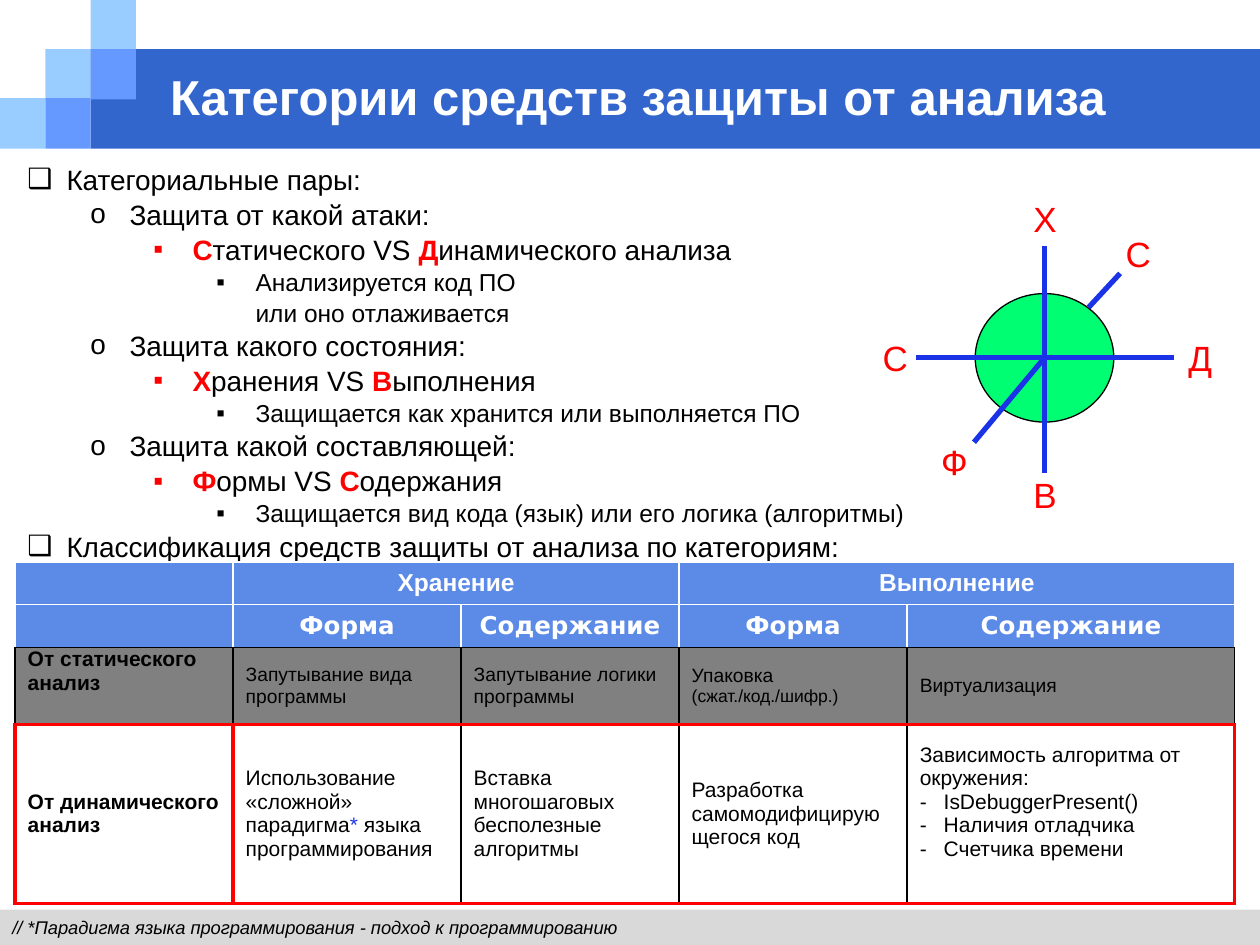
"""Builds a slide on categories of protection against program analysis."""
from dataclasses import dataclass

from lxml import etree
from pptx import Presentation
from pptx import util as u
from pptx.dml.color import RGBColor
from pptx.enum import shapes, text
from pptx.oxml import ns


@dataclass(frozen=True)
class Theme:
    font: str = "Arial"
    subhead_font: str = "DejaVu Sans"
    banner: str = "3366CC"
    tile_light: str = "99CCFF"
    tile_dark: str = "6699FF"
    header: str = "5C8AE7"
    gray: str = "808080"
    footer: str = "D9D9D9"
    white: str = "FFFFFF"
    black: str = "000000"
    red: str = "FF0000"
    blue: str = "1B33E7"
    green: str = "00FE73"
    title_size: float = 28
    axis_size: float = 20
    body_size: float = 16
    detail_size: float = 14
    cell_size: float = 12
    small_size: float = 11
    tiny_size: float = 10
    footer_size: float = 10.5


THEME = Theme()
CENTER = text.PP_ALIGN.CENTER
LEFT = text.PP_ALIGN.LEFT
MIDDLE = text.MSO_ANCHOR.MIDDLE

OUTLINE = [
    (0, "Категориальные пары:"),
    (1, "Защита от какой атаки:"),
    (2, "|С|татического VS |Д|инамического анализа"),
    (3, "Анализируется код ПО\nили оно отлаживается"),
    (1, "Защита какого состояния:"),
    (2, "|Х|ранения VS |В|ыполнения"),
    (3, "Защищается как хранится или выполняется ПО"),
    (1, "Защита какой составляющей:"),
    (2, "|Ф|ормы VS |С|одержания"),
    (3, "Защищается вид кода (язык) или его логика (алгоритмы)"),
    (0, "Классификация средств защиты от анализа по категориям:"),
]
COLUMNS = [1.73, 1.81, 1.73, 1.81, 2.6]
ROWS = [0.34, 0.34, 0.61, 1.42]
TABLE = [
    [[""], ["Хранение"], [""], ["Выполнение"], [""]],
    [[""], ["Форма"], ["Содержание"], ["Форма"], ["Содержание"]],
    [["От статического\nанализ"], ["Запутывание вида программы"], ["Запутывание логики программы"],
     ["Упаковка", "(сжат./код./шифр.)"], ["Виртуализация"]],
    [["От динамического\nанализ"], ["Использование «сложной» парадигма|*| языка программирования"],
     ["Вставка многошаговых бесполезные алгоритмы"], ["Разработка самомодифицирующегося код"],
     ["Зависимость алгоритма от окружения:", "- IsDebuggerPresent()", "- Наличия отладчика",
      "- Счетчика времени"]],
]
AXES = [
    ((7.27, 2.84), (9.32, 2.84)),
    ((8.29, 3.75), (8.29, 1.95)),
    ((7.73, 3.51), (8.29, 2.84)),
    ((8.64, 2.44), (8.89, 2.17)),
]
AXIS_LETTERS = [("С", 6.9, 2.62), ("Д", 9.32, 2.62), ("Х", 8.09, 1.52),
                ("В", 8.09, 3.71), ("Ф", 7.37, 3.45), ("С", 8.83, 1.8)]


def rgb(color):
    """Return a colour object for a hex string."""
    return RGBColor.from_string(color)


def inches(*lengths):
    """Convert several lengths to inches."""
    return [u.Inches(length) for length in lengths]


def set_bullet(para, mark, indent, hang):
    """Give a paragraph a bullet character and a hanging indent."""
    props = para._p.get_or_add_pPr()
    props.set("marL", str(u.Inches(indent)))
    props.set("indent", str(-u.Inches(hang)))
    etree.SubElement(props, ns.qn("a:buFont")).set("typeface", THEME.font)
    etree.SubElement(props, ns.qn("a:buChar")).set("char", mark)


def write(para, words, size, color=THEME.black, bold=False, italic=False, align=LEFT,
          font=THEME.font, accent=THEME.red, accent_bold=True):
    """Fill a paragraph; parts between bars take the accent colour."""
    para.alignment = align
    para.font.name, para.font.size = font, u.Pt(size)
    para.font.bold, para.font.italic = bold, italic
    para.font.color.rgb = rgb(color)
    for index, part in enumerate(words.split("|")):
        for number, line in enumerate(part.split("\n")):
            if number:
                para.add_line_break()
            if line:
                span = para.add_run()
                span.text = line
                if index % 2:
                    span.font.color.rgb = rgb(accent)
                    span.font.bold = accent_bold


def add_block(page, kind, place, fill, line=None):
    """Add a flat preset shape."""
    block = page.shapes.add_shape(kind, *inches(*place))
    block.shadow.inherit = False
    block.fill.solid()
    block.fill.fore_color.rgb = rgb(fill)
    if line:
        block.line.color.rgb = rgb(line)
        block.line.width = u.Pt(0.75)
    else:
        block.line.fill.background()
    return block


def add_banner(page):
    """Add the title band with its stair of tiles and the title above them."""
    rectangle = shapes.MSO_SHAPE.RECTANGLE
    add_block(page, rectangle, (0.72, 0.39, 9.28, 0.79), THEME.banner)
    tiles = [(0, 2, THEME.tile_light), (1, 1, THEME.tile_light), (2, 0, THEME.tile_light),
             (2, 1, THEME.tile_dark), (1, 2, THEME.tile_dark)]
    for column, row, color in tiles:
        tile = add_block(page, rectangle, (0.36 * column, 0.39 * row, 0.36, 0.4), color)
    title = page.shapes.title
    tile.element.addnext(title.element)
    title.left, title.top, title.width, title.height = inches(1.25, 0.5, 8.08, 0.53)
    title.text_frame.vertical_anchor = MIDDLE
    write(title.text_frame.paragraphs[0], "Категории средств защиты от анализа",
          THEME.title_size, THEME.white, bold=True)


def add_footer(page):
    """Add the gray footnote strip."""
    strip = add_block(page, shapes.MSO_SHAPE.RECTANGLE, (0, 7.22, 10, 0.28), THEME.footer)
    write(strip.text_frame.paragraphs[0],
          "// *Парадигма языка программирования - подход к программированию",
          THEME.footer_size, italic=True)


def add_outline(page):
    """Add the four-level bulleted list."""
    frame = page.shapes.add_textbox(*inches(0.12, 1.23, 9.76, 3.2)).text_frame
    frame.word_wrap = True
    for index, (level, words) in enumerate(OUTLINE):
        para = frame.add_paragraph() if index else frame.paragraphs[0]
        para.level = level
        para.line_spacing = 1.04
        set_bullet(para, "❑o▪▪"[level], 0.31 + 0.5 * level, 0.31)
        write(para, words, THEME.detail_size if level == 3 else THEME.body_size)


def set_borders(cell, row, column):
    """Draw the cell edges: white in the head, black in the body, red round the last row."""
    edge = THEME.white if row < 2 else THEME.black
    colors = dict.fromkeys("LRTB", edge)
    if row == 1:
        colors["B"] = THEME.black
    if row == 2:
        colors["B"] = THEME.red
    if row == 3:
        colors.update(T=THEME.red, B=THEME.red)
        colors["L"] = THEME.red if column < 2 else edge
        colors["R"] = THEME.red if column in (0, 4) else edge
    props = cell._tc.get_or_add_tcPr()
    for side, color in colors.items():
        width = u.Pt(2.25 if color == THEME.red else 1)
        line = etree.SubElement(props, ns.qn(f"a:ln{side}"), w=str(width))
        fill = etree.SubElement(line, ns.qn("a:solidFill"))
        etree.SubElement(fill, ns.qn("a:srgbClr"), val=color)


def fill_cell(cell, row, column, lines):
    """Format one table cell and write its lines."""
    set_borders(cell, row, column)
    cell.fill.solid()
    cell.fill.fore_color.rgb = rgb([THEME.header, THEME.header, THEME.gray, THEME.white][row])
    cell.margin_top = cell.margin_bottom = 0
    cell.vertical_anchor = text.MSO_ANCHOR.TOP if (row, column) == (2, 0) else MIDDLE
    if len(lines) > 2:
        cell.margin_bottom = u.Inches(0.19)
    for index, words in enumerate(lines):
        para = cell.text_frame.add_paragraph() if index else cell.text_frame.paragraphs[0]
        if words.startswith("- "):
            set_bullet(para, "-", 0.19, 0.19)
            words = words[2:]
        if row < 2:
            write(para, words, THEME.detail_size, THEME.white, bold=True, align=CENTER,
                  font=THEME.subhead_font if row else THEME.font)
        else:
            size = THEME.small_size if row == 2 and column else THEME.cell_size
            write(para, words, THEME.tiny_size if words.startswith("(") else size,
                  bold=column == 0, accent=THEME.blue, accent_bold=False)


def add_categories(page):
    """Add the table of protection means by category."""
    place = inches(0.12, 4.46, sum(COLUMNS), sum(ROWS))
    table = page.shapes.add_table(len(ROWS), len(COLUMNS), *place).table
    table.first_row = table.horz_banding = False
    for column, width in zip(table.columns, COLUMNS):
        column.width = u.Inches(width)
    for row, height in zip(table.rows, ROWS):
        row.height = u.Inches(height)
    for start in (1, 3):
        table.cell(0, start).merge(table.cell(0, start + 1))
    for row, cells in enumerate(TABLE):
        for column, lines in enumerate(cells):
            fill_cell(table.cell(row, column), row, column, lines)


def add_axes(page):
    """Add the sphere with three lettered axes."""
    add_block(page, shapes.MSO_SHAPE.OVAL, (7.74, 2.33, 1.1, 1.02), THEME.green, THEME.black)
    for start, end in AXES:
        axis = page.shapes.add_connector(shapes.MSO_CONNECTOR.STRAIGHT, *inches(*start, *end))
        axis.line.color.rgb = rgb(THEME.blue)
        axis.line.width = u.Pt(3)
        etree.SubElement(axis.element.spPr, ns.qn("a:effectLst"))
    for letter, left, top in AXIS_LETTERS:
        frame = page.shapes.add_textbox(*inches(left, top, 0.41, 0.44)).text_frame
        frame.word_wrap = False
        write(frame.paragraphs[0], letter, THEME.axis_size, THEME.red, align=CENTER)


def main():
    """Build and save the slide."""
    deck = Presentation()
    deck.slide_width, deck.slide_height = inches(10, 7.5)
    page = deck.slides.add_slide(deck.slide_layouts[5])
    add_banner(page)
    add_footer(page)
    add_outline(page)
    add_categories(page)
    add_axes(page)
    deck.save("out.pptx")


if __name__ == "__main__":
    main()
